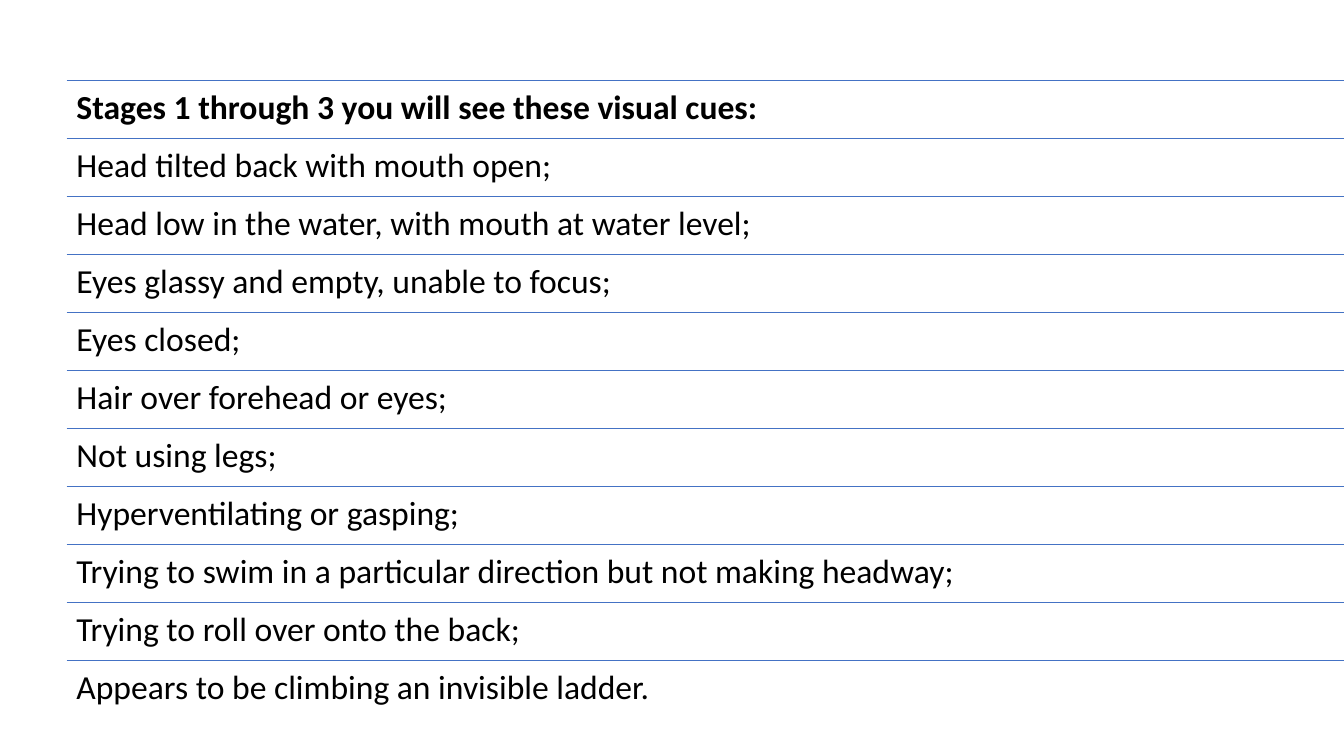
import pptx
import pptx.util
import pptx.dml.color
import pptx.enum.shapes
import pptx.enum.text
from lxml import etree

Inches, Pt = pptx.util.Inches, pptx.util.Pt

TITLE = "Stages 1 through 3 you will see these visual cues:"
CUES = [
    "Head tilted back with mouth open;",
    "Head low in the water, with mouth at water level;",
    "Eyes glassy and empty, unable to focus;",
    "Eyes closed;",
    "Hair over forehead or eyes;",
    "Not using legs;",
    "Hyperventilating or gasping;",
    "Trying to swim in a particular direction but not making headway;",
    "Trying to roll over onto the back;",
    "Appears to be climbing an invisible ladder.",
]

BLUE = pptx.dml.color.RGBColor(0x44, 0x72, 0xC4)
BLACK = pptx.dml.color.RGBColor(0, 0, 0)

WIDE, HIGH = 13.33, 7.5
LEFT, TOP, LAST = 0.66, 0.8, 6.55
STEP = (LAST - TOP) / len(CUES)

INSET = Inches(0.1)
FRAME = {
    "word_wrap": True,
    "vertical_anchor": pptx.enum.text.MSO_ANCHOR.TOP,
    "margin_left": INSET,
    "margin_top": INSET,
    "margin_right": INSET,
    "margin_bottom": INSET,
}
FONT = {"name": "Calibri", "size": Pt(24)}


def put(item, values):
    """Set each attribute of item from a dict."""
    for name, value in values.items():
        setattr(item, name, value)


def add_rule(slide, y):
    rule = slide.shapes.add_connector(
        pptx.enum.shapes.MSO_CONNECTOR.STRAIGHT,
        Inches(LEFT), Inches(y), Inches(WIDE), Inches(y))
    rule.line.color.rgb = BLUE
    rule.line.width = Pt(1)
    props = rule._element.spPr
    etree.SubElement(props, pptx.oxml.ns.qn("a:effectLst"))


def add_cue(slide, y, text, bold):
    box = slide.shapes.add_textbox(
        Inches(LEFT), Inches(y), Inches(WIDE - LEFT), Inches(STEP))
    put(box.text_frame, FRAME)
    para = box.text_frame.paragraphs[0]
    para.line_spacing = 0.9
    run = para.add_run()
    run.text = text
    put(run.font, FONT)
    run.font.bold = bold
    run.font.color.rgb = BLACK


def main():
    deck = pptx.Presentation()
    deck.slide_width, deck.slide_height = Inches(WIDE), Inches(HIGH)
    slide = deck.slides.add_slide(deck.slide_layouts[6])
    for row, text in enumerate([TITLE] + CUES):
        y = TOP + row * STEP
        add_rule(slide, y)
        add_cue(slide, y, text, row == 0)
    deck.save("out.pptx")


if __name__ == "__main__":
    main()
